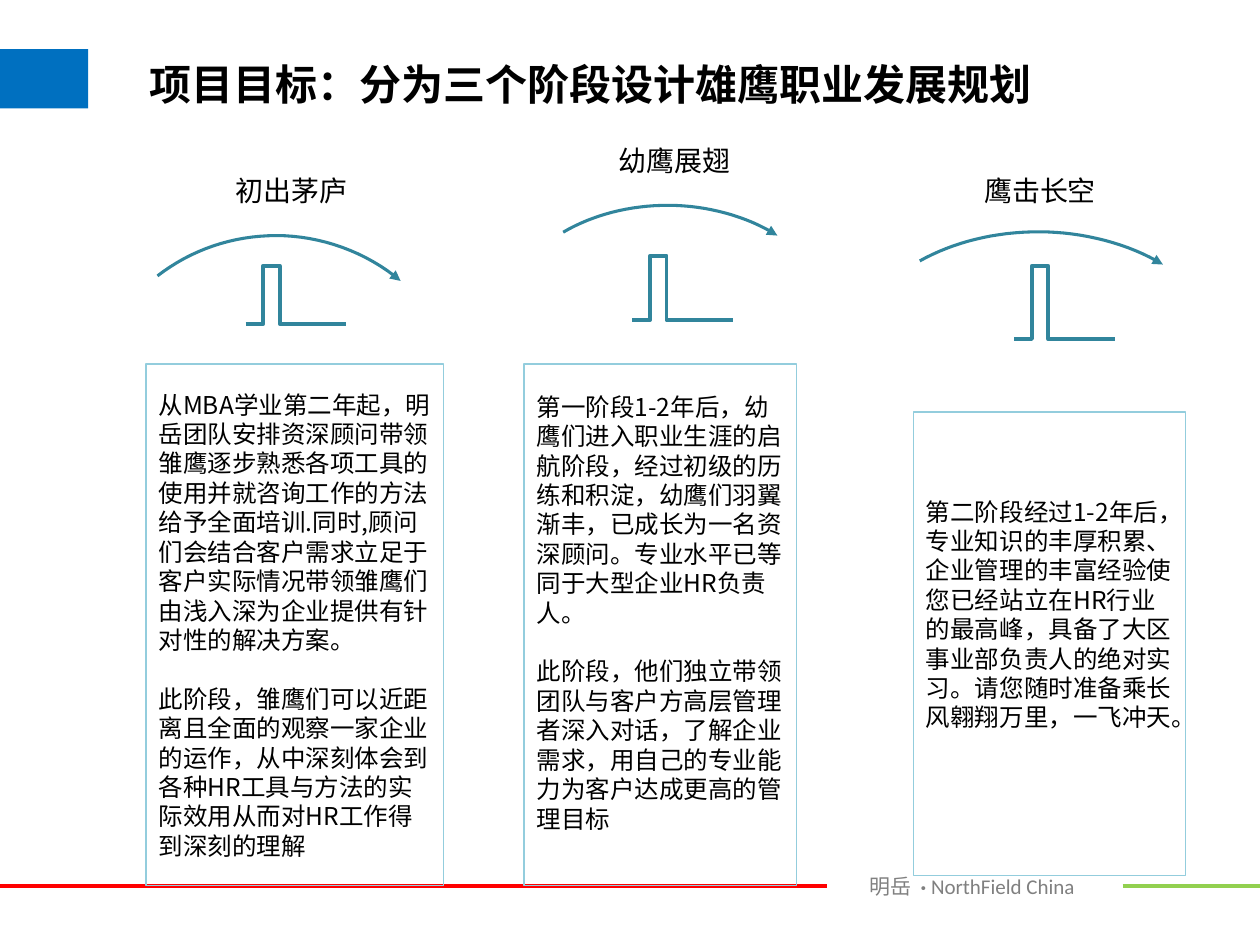
from lxml import etree
from pptx import Presentation
from pptx import util as u
from pptx.dml.color import RGBColor
from pptx.enum import shapes, text
from pptx.oxml import ns

CJK_FONT = "Noto Sans CJK SC"
LINE_HEIGHT = 16.8  # points, body text
# Control points of the arch, right to left, in fractions of its width and depth
ARCH = [
    [(1, 1), (0.86, 0.36), (0.67, 0), (0.49, 0)],
    [(0.49, 0), (0.31, 0), (0.14, 0.31), (0, 0.89)],
]


def color(hex_value):
    return RGBColor.from_string(hex_value)


def bezier(points, t):
    """Return the point at t on a cubic curve."""
    weights = ((1 - t) ** 3, 3 * t * (1 - t) ** 2, 3 * t * t * (1 - t), t ** 3)
    return tuple(sum(w * p[axis] for w, p in zip(weights, points)) for axis in (0, 1))


class SlideBuilder:
    teal = "31859C"
    pale_teal = "93CDDD"
    black = "000000"

    def __init__(self, slide):
        self.slide = slide
        self.shapes = slide.shapes

    def start_group(self):
        """Put the elements that follow into a new group."""
        self.shapes = self.slide.shapes.add_group_shape().shapes

    def add_run(self, paragraph, wording, size, hex_value, bold=False, font=CJK_FONT):
        run = paragraph.add_run()
        run.text = wording
        run.font.name = font
        run.font.size = u.Pt(size)
        run.font.bold = bold
        run.font.color.rgb = color(hex_value)
        east_asian = etree.SubElement(run.font._element, ns.qn("a:ea"))
        east_asian.set("typeface", CJK_FONT)

    def text_box(self, left, top, width, height, runs, align=text.PP_ALIGN.LEFT,
                 anchor=text.MSO_ANCHOR.TOP):
        box = self.shapes.add_textbox(*map(u.Inches, (left, top, width, height)))
        frame = box.text_frame
        frame.word_wrap = True
        frame.vertical_anchor = anchor
        paragraph = frame.paragraphs[0]
        paragraph.alignment = align
        for run in runs:
            self.add_run(paragraph, **run)

    def rectangle(self, left, top, width, height, fill=None, line=None):
        shape = self.shapes.add_shape(
            shapes.MSO_SHAPE.RECTANGLE, *map(u.Inches, (left, top, width, height)))
        shape.shadow.inherit = False
        if fill:
            shape.fill.solid()
            shape.fill.fore_color.rgb = color(fill)
        else:
            shape.fill.background()
        if line:
            shape.line.color.rgb = color(line)
            shape.line.width = u.Pt(0.75)
        else:
            shape.line.fill.background()
        return shape

    def panel(self, left, top, width, height, paragraphs, bottom_inset):
        shape = self.rectangle(left, top, width, height, line=self.pale_teal)
        frame = shape.text_frame
        frame.word_wrap = True
        frame.vertical_anchor = text.MSO_ANCHOR.MIDDLE
        frame.margin_bottom = u.Inches(bottom_inset)
        for index, wording in enumerate(paragraphs):
            paragraph = frame.add_paragraph() if index else frame.paragraphs[0]
            paragraph.alignment = text.PP_ALIGN.LEFT
            paragraph.line_spacing = u.Pt(LINE_HEIGHT)
            paragraph.space_before = u.Pt(LINE_HEIGHT if index else 0)
            self.add_run(paragraph, wording, 14, self.black)

    def rule(self, start, end, y, hex_value):
        connector = self.shapes.add_connector(
            shapes.MSO_CONNECTOR.STRAIGHT, *map(u.Inches, (start, y, end, y)))
        connector.line.color.rgb = color(hex_value)
        connector.line.width = u.Pt(2.25)
        etree.SubElement(connector._element.spPr, ns.qn("a:effectLst"))

    def outline(self, points, weight):
        """Draw an open teal path through points given in inches."""
        points = [(u.Inches(x), u.Inches(y)) for x, y in points]
        builder = self.shapes.build_freeform(*points[0])
        builder.add_line_segments(points[1:], close=False)
        shape = builder.convert_to_shape()
        shape.shadow.inherit = False
        shape.fill.background()
        shape.line.color.rgb = color(self.teal)
        shape.line.width = u.Pt(weight)
        return shape

    def pulse(self, left, top, height):
        bottom = top + height
        steps = [(0, bottom), (0.14, bottom), (0.14, top), (0.27, top),
                 (0.27, bottom), (0.8, bottom)]
        self.outline([(left + x, y) for x, y in steps], 2.25)

    def arch_arrow(self, left, top, width, depth):
        steps = 16
        curve = [ARCH[0][0]]
        for points in ARCH:
            curve += [bezier(points, i / steps) for i in range(1, steps + 1)]
        shape = self.outline([(left + x * width, top + y * depth) for x, y in curve], 1.75)
        head = etree.SubElement(shape.line._get_or_add_ln(), ns.qn("a:headEnd"))
        head.set("type", "triangle")


STAGES = [
    dict(
        label=("初出茅庐", 1.09, 1.33, 2.45),
        arch=(1.25, 1.87, 1.93, 0.36),
        pulse=(1.95, 2.11, 0.46),
        panel=(1.16, 2.89, 2.36, 4.14),
        bottom_inset=0.05,
        paragraphs=[
            "从MBA学业第二年起，明岳团队安排资深顾问带领雏鹰逐步熟悉各项工具的使用并就咨询工作的方法给予全面培训.同时,顾问们会结合客户需求立足于客户实际情况带领雏鹰们由浅入深为企业提供有针对性的解决方案。",
            "此阶段，雏鹰们可以近距离且全面的观察一家企业的运作，从中深刻体会到各种HR工具与方法的实际效用从而对HR工作得到深刻的理解",
        ],
    ),
    dict(
        label=("鹰击长空", 7.03, 1.33, 2.45),
        arch=(7.3, 1.84, 1.93, 0.26),
        pulse=(8.05, 2.11, 0.58),
        panel=(7.25, 3.27, 2.16, 3.68),
        bottom_inset=0.52,
        paragraphs=[
            "第二阶段经过1-2年后，专业知识的丰厚积累、企业管理的丰富经验使您已经站立在HR行业的最高峰，具备了大区事业部负责人的绝对实习。请您随时准备乘长风翱翔万里，一飞冲天。",
        ],
    ),
    dict(
        label=("幼鹰展翅", 3.98, 1.09, 2.75),
        arch=(4.47, 1.63, 1.7, 0.24),
        pulse=(5.02, 2.03, 0.51),
        panel=(4.16, 2.89, 2.16, 4.14),
        bottom_inset=0.25,
        paragraphs=[
            "第一阶段1-2年后，幼鹰们进入职业生涯的启航阶段，经过初级的历练和积淀，幼鹰们羽翼渐丰，已成长为一名资深顾问。专业水平已等同于大型企业HR负责人。",
            "此阶段，他们独立带领团队与客户方高层管理者深入对话，了解企业需求，用自己的专业能力为客户达成更高的管理目标",
        ],
    ),
]


def main():
    presentation = Presentation()
    presentation.slide_width = u.Inches(10)
    presentation.slide_height = u.Inches(7.5)
    builder = SlideBuilder(presentation.slides.add_slide(presentation.slide_layouts[6]))

    builder.rectangle(0, 0.39, 0.7, 0.47, fill="0070C0")
    builder.rule(0, 6.56, 7.03, "FF0000")
    footer = dict(size=12, hex_value="808080", font="Calibri")
    builder.text_box(6.8, 6.88, 2.42, 0.3, [
        dict(wording="明岳 ", **footer),
        dict(wording=" · ", bold=True, **footer),
        dict(wording="NorthField China", **footer),
    ])
    builder.rule(8.91, 10, 7.03, "92D050")
    title = dict(wording="项目目标：分为三个阶段设计雄鹰职业发展规划", size=24,
                 hex_value=builder.black, bold=True)
    builder.text_box(1.09, 0.39, 8.41, 0.55, [title], anchor=text.MSO_ANCHOR.MIDDLE)

    for stage in STAGES:
        builder.start_group()
        builder.pulse(*stage["pulse"])
        builder.arch_arrow(*stage["arch"])
        wording, left, top, width = stage["label"]
        label = dict(wording=wording, size=16, hex_value=builder.black)
        builder.text_box(left, top, width, 0.37, [label], align=text.PP_ALIGN.CENTER)
        builder.panel(*stage["panel"], stage["paragraphs"], stage["bottom_inset"])

    presentation.save("out.pptx")


if __name__ == "__main__":
    main()
